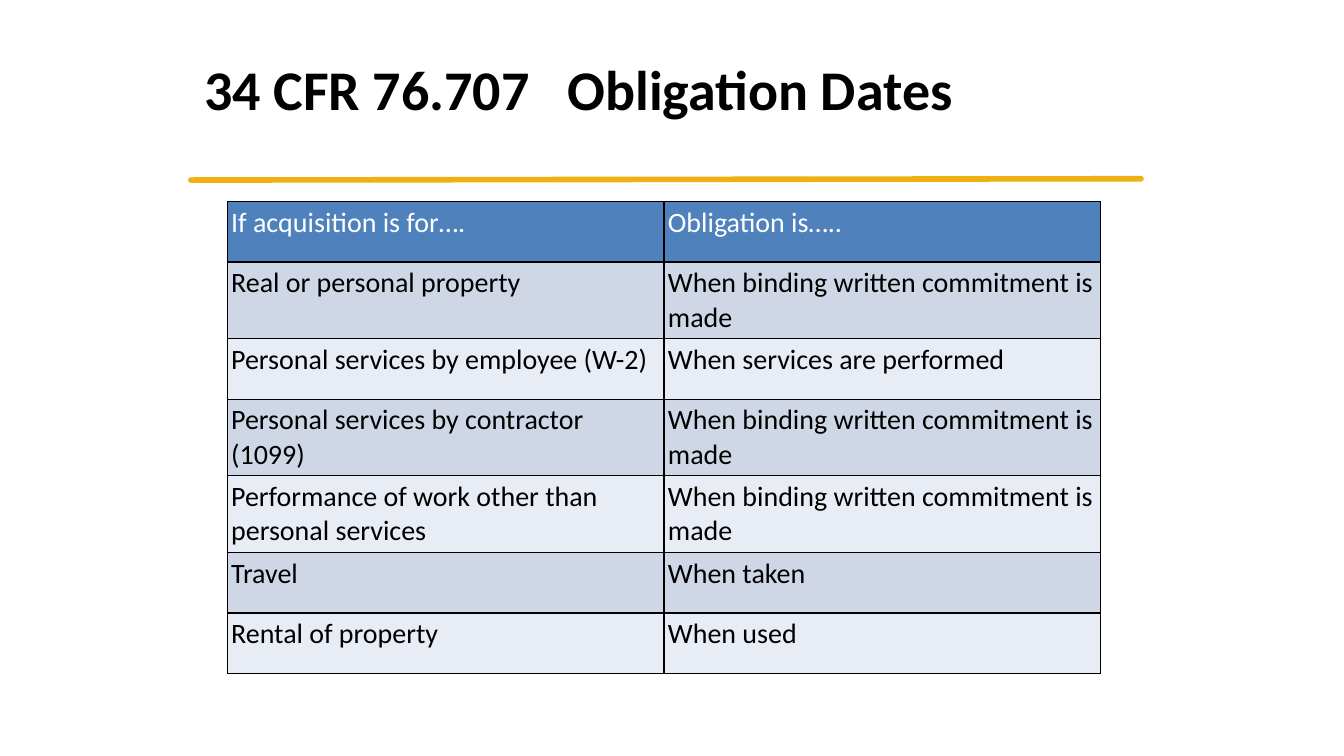
from dataclasses import dataclass

from lxml.etree import SubElement
from pptx import Presentation
from pptx.dml.color import RGBColor
from pptx.enum.shapes import MSO_CONNECTOR
from pptx.enum.text import MSO_ANCHOR, PP_ALIGN
from pptx.oxml import parse_xml
from pptx.oxml.ns import nsdecls, qn
from pptx.util import Inches, Pt


@dataclass(frozen=True)
class Theme:
    font: str = "Calibri"
    black: str = "000000"
    white: str = "FFFFFF"
    gold: str = "EEB111"
    head: str = "4F81BD"
    bands: tuple = ("CFD7E7", "E8ECF4")
    title: float = 30
    body: float = 15
    rule: float = 3
    edge: float = 0.75


THEME = Theme()
WIDTH = 10
HEIGHT = WIDTH * 9 / 16
MADE = "When binding written commitment is made"
ROWS = [
    ("If acquisition is for….", "Obligation is….."),
    ("Real or personal property", MADE),
    ("Personal services by employee (W-2)", "When services are performed"),
    ("Personal services by contractor (1099)", MADE),
    ("Performance of work other than personal services", MADE),
    ("Travel", "When taken"),
    ("Rental of property", "When used"),
]
ROW, TALL, COL = 0.45, 0.56, 3.25


def apply(item, values):
    for name, value in values.items():
        setattr(item, name, value)


def style(font, size, color, bold=False):
    apply(font, {"name": THEME.font, "size": Pt(size), "bold": bold})
    font.color.rgb = RGBColor.from_string(color)


def add_title(slide, text):
    title = slide.shapes.title
    apply(title, {"left": Inches(1.42), "top": Inches(0.14),
                  "width": Inches(8.05), "height": Inches(1.09)})
    frame = title.text_frame
    apply(frame, {"text": text, "word_wrap": True,
                  "vertical_anchor": MSO_ANCHOR.MIDDLE})
    para = frame.paragraphs[0]
    apply(para, {"alignment": PP_ALIGN.LEFT, "line_spacing": 0.9})
    style(para.runs[0].font, THEME.title, THEME.black, True)


def add_rule(slide):
    rule = slide.shapes.add_connector(
        MSO_CONNECTOR.STRAIGHT,
        Inches(1.42), Inches(1.34), Inches(8.49), Inches(1.33))
    rule.line.color.rgb = RGBColor.from_string(THEME.gold)
    rule.line.width = Pt(THEME.rule)
    rule.line._get_or_add_ln().set("cap", "rnd")
    SubElement(rule._element.spPr, qn("a:effectLst"))


def add_edges(cell):
    """Draw the four borders; they must come before the cell's fill."""
    props = cell._tc.get_or_add_tcPr()
    for index, side in enumerate("LRTB"):
        props.insert(index, parse_xml(
            f'<a:ln{side} {nsdecls("a")} w="{Pt(THEME.edge)}"><a:solidFill>'
            f'<a:srgbClr val="{THEME.black}"/></a:solidFill></a:ln{side}>'))


def fill_cell(cell, text, fill, color):
    pad = Inches(0.03)
    apply(cell, {"text": text, "vertical_anchor": MSO_ANCHOR.TOP,
                 "margin_left": pad, "margin_right": pad,
                 "margin_top": pad, "margin_bottom": pad})
    style(cell.text_frame.paragraphs[0].runs[0].font, THEME.body, color)
    cell.fill.solid()
    cell.fill.fore_color.rgb = RGBColor.from_string(fill)
    add_edges(cell)


def add_grid(slide, rows):
    sizes = [TALL if MADE in row else ROW for row in rows]
    table = slide.shapes.add_table(
        len(rows), 2, Inches(1.69), Inches(1.5),
        Inches(2 * COL), Inches(sum(sizes))).table
    for col in table.columns:
        col.width = Inches(COL)
    for index, (row, size) in enumerate(zip(rows, sizes)):
        table.rows[index].height = Inches(size)
        fill = THEME.bands[(index - 1) % 2] if index else THEME.head
        color = THEME.black if index else THEME.white
        for place, text in enumerate(row):
            fill_cell(table.cell(index, place), text, fill, color)


def main():
    deck = Presentation()
    apply(deck, {"slide_width": Inches(WIDTH),
                 "slide_height": Inches(HEIGHT)})
    slide = deck.slides.add_slide(deck.slide_layouts[5])
    add_rule(slide)
    add_title(slide, "34 CFR 76.707\u00a0\u00a0 Obligation Dates".replace("\u00a0", " "))
    add_grid(slide, ROWS)
    deck.save("out.pptx")


if __name__ == "__main__":
    main()
